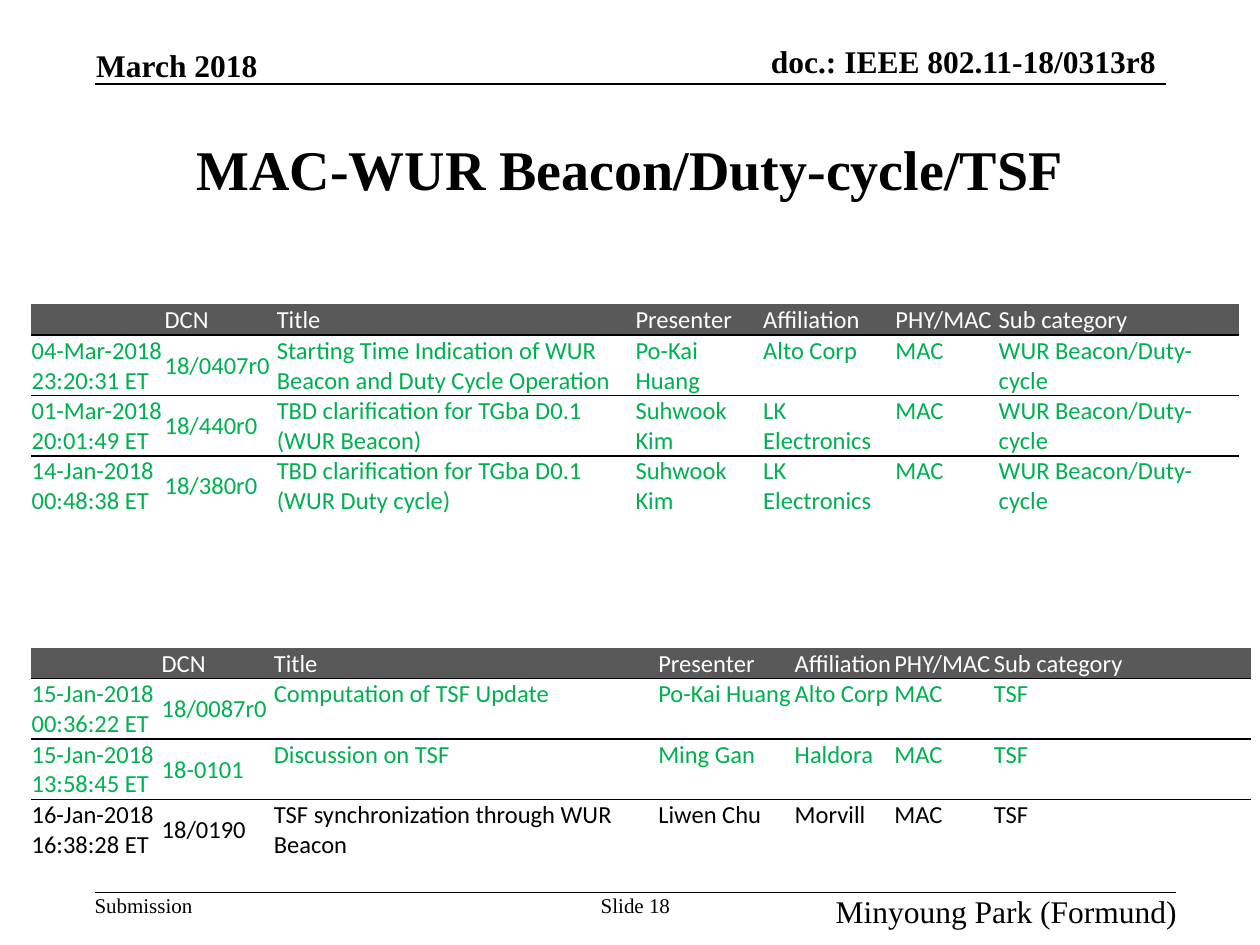
from dataclasses import dataclass

from lxml.etree import SubElement
from pptx import Presentation
from pptx.dml.color import RGBColor
from pptx.enum.shapes import MSO_CONNECTOR
from pptx.enum.text import MSO_ANCHOR as Anchor, MSO_AUTO_SIZE as AutoSize, PP_ALIGN as Align
from pptx.oxml import parse_xml
from pptx.oxml.ns import nsdecls, qn
from pptx.util import Pt

BLACK = RGBColor(0x00, 0x00, 0x00)
WHITE = RGBColor(0xFF, 0xFF, 0xFF)
GREEN = RGBColor(0x00, 0xB0, 0x50)
GRAY = RGBColor(0x59, 0x59, 0x59)
SERIF, SANS = "Times New Roman", "Calibri"
NO_TABLE_STYLE = "{2D5ABB26-0587-4C30-8999-92F81FD0307C}"
HEADINGS = ("", "DCN", "Title", "Presenter", "Affiliation", "PHY/MAC", "Sub category")
TABLE_LEFT = 17.6
HEADER_HEIGHT, ROW_HEIGHT = 17.5, 34.5
CELL_SIZE, CELL_INSET = 14, 0.5


@dataclass
class Label:
    text: str
    left: float
    top: float
    width: float
    height: float
    size: float
    align: Align = Align.LEFT
    anchor: Anchor = Anchor.TOP
    bold: bool = False
    wrap: bool = False


@dataclass
class Rule:
    left: float
    right: float
    y: float


@dataclass
class Submission:
    values: tuple[str, ...]
    color: RGBColor = GREEN


@dataclass
class Listing:
    top: float
    widths: tuple[float, ...]
    submissions: list[Submission]


LABELS = [
    Label("doc.: IEEE 802.11-18/0313r8", 402, 23.8, 258.5, 21.6, 18, Align.RIGHT, Anchor.BOTTOM, True),
    Label("March 2018", 55, 26.4, 105.8, 21.6, 18, anchor=Anchor.BOTTOM, bold=True),
    Label("Submission", 54, 510, 56.2, 14.4, 12),
    Label("Slide 18", 342.2, 510, 41.8, 14.4, 12, Align.CENTER),
    Label("Minyoung Park (Formund)", 455.8, 510, 216.7, 14.4, 18, Align.RIGHT, wrap=True),
]
RULES = [Rule(54, 666, 48), Rule(54, 672, 510)]
LISTINGS = [
    Listing(174, (76, 64.1, 205, 73, 75.6, 59, 138), [
        Submission(("04-Mar-2018 23:20:31 ET", "18/0407r0",
                    "Starting Time Indication of WUR Beacon and Duty Cycle Operation",
                    "Po-Kai Huang", "Alto Corp", "MAC", "WUR Beacon/Duty-cycle")),
        Submission(("01-Mar-2018 20:01:49 ET", "18/440r0",
                    "TBD clarification for TGba D0.1 (WUR Beacon)",
                    "Suhwook Kim", "LK Electronics", "MAC", "WUR Beacon/Duty-cycle")),
        Submission(("14-Jan-2018 00:48:38 ET", "18/380r0",
                    "TBD clarification for TGba D0.1 (WUR Duty cycle)",
                    "Suhwook Kim", "LK Electronics", "MAC", "WUR Beacon/Duty-cycle")),
    ]),
    Listing(370.3, (74.3, 64.1, 219.7, 78, 56.9, 56.9, 147.6), [
        Submission(("15-Jan-2018 00:36:22 ET", "18/0087r0", "Computation of TSF Update",
                    "Po-Kai Huang", "Alto Corp", "MAC", "TSF")),
        Submission(("15-Jan-2018 13:58:45 ET", "18-0101", "Discussion on TSF",
                    "Ming Gan", "Haldora", "MAC", "TSF")),
        Submission(("16-Jan-2018 16:38:28 ET", "18/0190", "TSF synchronization through WUR Beacon",
                    "Liwen Chu", "Morvill", "MAC", "TSF"), BLACK),
    ]),
]


def style_text(frame, font_name: str, size: float, color: RGBColor, bold: bool = False) -> None:
    for para in frame.paragraphs:
        for span in para.runs:
            span.font.name = font_name
            span.font.size = Pt(size)
            span.font.bold = bold
            span.font.color.rgb = color


def add_label(page, label: Label) -> None:
    box = page.shapes.add_textbox(Pt(label.left), Pt(label.top), Pt(label.width), Pt(label.height))
    frame = box.text_frame
    frame.margin_left = frame.margin_right = frame.margin_top = frame.margin_bottom = 0
    frame.word_wrap = label.wrap
    frame.auto_size = AutoSize.SHAPE_TO_FIT_TEXT
    frame.vertical_anchor = label.anchor
    frame.text = label.text
    frame.paragraphs[0].alignment = label.align
    style_text(frame, SERIF, label.size, BLACK, label.bold)


def add_rule(page, rule: Rule) -> None:
    line = page.shapes.add_connector(
        MSO_CONNECTOR.STRAIGHT, Pt(rule.left), Pt(rule.y), Pt(rule.right), Pt(rule.y))
    line.line.color.rgb = BLACK
    line.line.width = Pt(1)
    SubElement(line._element.spPr, qn("a:effectLst"))


def add_bottom_border(cell) -> None:
    border = parse_xml(
        f'<a:lnB {nsdecls("a")} w="{Pt(1)}"><a:solidFill><a:srgbClr val="{BLACK}"/></a:solidFill></a:lnB>')
    cell._tc.get_or_add_tcPr().insert(0, border)


def fill_cell(cell, text: str, color: RGBColor, centered: bool) -> None:
    cell.margin_left = cell.margin_right = cell.margin_top = Pt(CELL_INSET)
    cell.margin_bottom = 0
    cell.vertical_anchor = Anchor.MIDDLE if centered else Anchor.TOP
    if text:
        cell.text_frame.text = text
        style_text(cell.text_frame, SANS, CELL_SIZE, color)
    else:
        # An empty cell needs its own text size to keep the row low
        end = SubElement(cell.text_frame.paragraphs[0]._p, qn("a:endParaRPr"))
        end.set("sz", str(CELL_SIZE * 100))


def add_listing(page, listing: Listing) -> None:
    rows = [Submission(HEADINGS, WHITE), *listing.submissions]
    heights = [HEADER_HEIGHT] + [ROW_HEIGHT] * len(listing.submissions)
    frame = page.shapes.add_table(
        len(rows), len(HEADINGS), Pt(TABLE_LEFT), Pt(listing.top),
        Pt(sum(listing.widths)), Pt(sum(heights)))
    table = frame.table
    table.horz_banding = False
    table._tbl.tblPr.find(qn("a:tableStyleId")).text = NO_TABLE_STYLE
    for column, width in zip(table.columns, listing.widths):
        column.width = Pt(width)
    for r, (row, height) in enumerate(zip(rows, heights)):
        table.rows[r].height = Pt(height)
        for c, text in enumerate(row.values):
            cell = table.cell(r, c)
            fill_cell(cell, text, row.color, centered=c < 2)
            if r == 0:
                cell.fill.solid()
                cell.fill.fore_color.rgb = GRAY
            else:
                cell.fill.background()
            if r < len(rows) - 1:
                add_bottom_border(cell)


def add_title(page, text: str) -> None:
    title = page.shapes.title
    title.left, title.top, title.width, title.height = Pt(54), Pt(54), Pt(612), Pt(84)
    frame = title.text_frame
    frame.text = text
    frame.auto_size = AutoSize.NONE
    frame.vertical_anchor = Anchor.MIDDLE
    frame.paragraphs[0].alignment = Align.CENTER
    style_text(frame, SERIF, 32, BLACK, bold=True)


def main() -> None:
    deck = Presentation()
    deck.slide_width, deck.slide_height = Pt(720), Pt(540)
    page = deck.slides.add_slide(deck.slide_layouts[5])

    # Header and footer
    for rule in RULES:
        add_rule(page, rule)
    for label in LABELS:
        add_label(page, label)

    # Title and submission tables
    add_title(page, "MAC-WUR Beacon/Duty-cycle/TSF")
    for listing in LISTINGS:
        add_listing(page, listing)

    deck.save("out.pptx")


if __name__ == "__main__":
    main()
